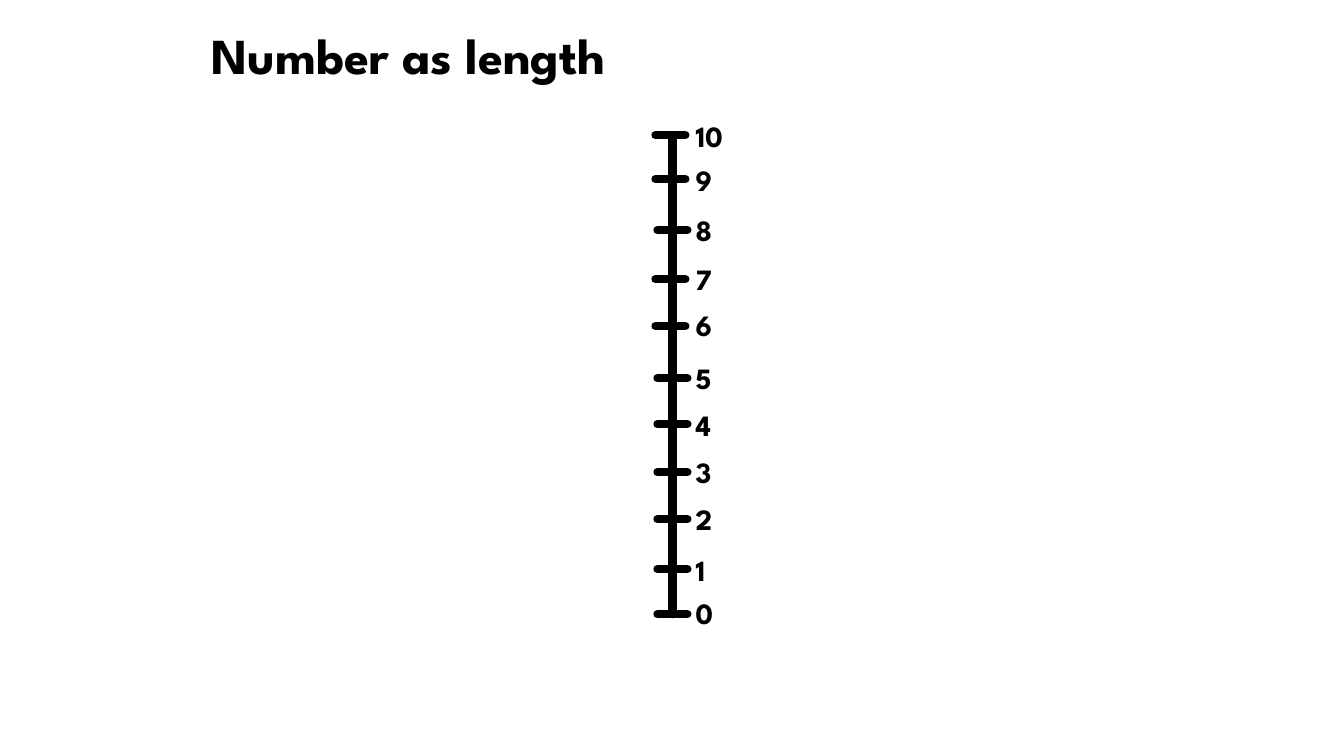
import pptx
import pptx.util
import pptx.dml.color
import pptx.enum.shapes
import pptx.enum.text
import pptx.oxml

# Content
TITLE = "Number as length"
# label, tick left, tick height on slide, label top
TICKS = [
    ("0", 657, 614, 591),
    ("1", 657, 569, 548),
    ("2", 657, 519, 497),
    ("3", 657, 472, 450),
    ("4", 657, 424, 403),
    ("5", 657, 378, 356),
    ("6", 655, 326, 303),
    ("7", 655, 279, 257),
    ("8", 657, 230, 208),
    ("9", 655, 179, 158),
    ("10", 655, 135, 114),
]
COLORS = {"ink": "000000", "paper": "FFFFFF"}
FONT = "League Spartan"
WIDE, HIGH = 18.2, 10.24
PX = 914400 / 73.8
AXIS = 672
TICK = 30
LABEL = 688
DIGIT = 16


def px(n):
    return pptx.util.Emu(round(n * PX))


def color(name):
    return pptx.dml.color.RGBColor.from_string(COLORS[name])


def line(slide, x1, y1, x2, y2):
    kind = pptx.enum.shapes.MSO_CONNECTOR.STRAIGHT
    bar = slide.shapes.add_connector(kind, px(x1), px(y1), px(x2), px(y2))
    bar.line.width = pptx.util.Pt(8)
    bar.line.fill.solid()
    bar.line.fill.fore_color.rgb = color("ink")
    bar.line._get_or_add_ln().set("cap", "rnd")
    props = bar._element.spPr
    props.append(pptx.oxml.parse_xml(
        '<a:effectLst xmlns:a='
        '"http://schemas.openxmlformats.org/drawingml/2006/main"/>'))


def write(shape, text, size, wrap):
    frame = shape.text_frame
    frame.text = text
    frame.word_wrap = wrap
    frame.auto_size = pptx.enum.text.MSO_AUTO_SIZE.SHAPE_TO_FIT_TEXT
    frame.vertical_anchor = pptx.enum.text.MSO_ANCHOR.TOP
    para = frame.paragraphs[0]
    para.alignment = pptx.enum.text.PP_ALIGN.LEFT
    para.font.name = FONT
    para.font.size = pptx.util.Pt(size)
    para.font.bold = True
    para.font.color.rgb = color("ink")


def main():
    deck = pptx.Presentation()
    deck.slide_width = pptx.util.Inches(WIDE)
    deck.slide_height = pptx.util.Inches(HIGH)
    slide = deck.slides.add_slide(deck.slide_layouts[5])
    slide.background.fill.solid()
    slide.background.fill.fore_color.rgb = color("paper")

    # Title
    title = slide.shapes.title
    title.left, title.top = px(204), px(20)
    title.width, title.height = px(555), px(69)
    write(title, TITLE, 49.1, True)

    # Number line, from the first tick to the last
    line(slide, AXIS, TICKS[0][2], AXIS, TICKS[-1][2])
    for text, left, y, top in TICKS:
        line(slide, left, y, left + TICK, y)
        box = slide.shapes.add_textbox(
            px(LABEL), px(top), px(DIGIT * (len(text) + 1)), px(43))
        write(box, text, 28.7, False)

    deck.save("out.pptx")


if __name__ == "__main__":
    main()
